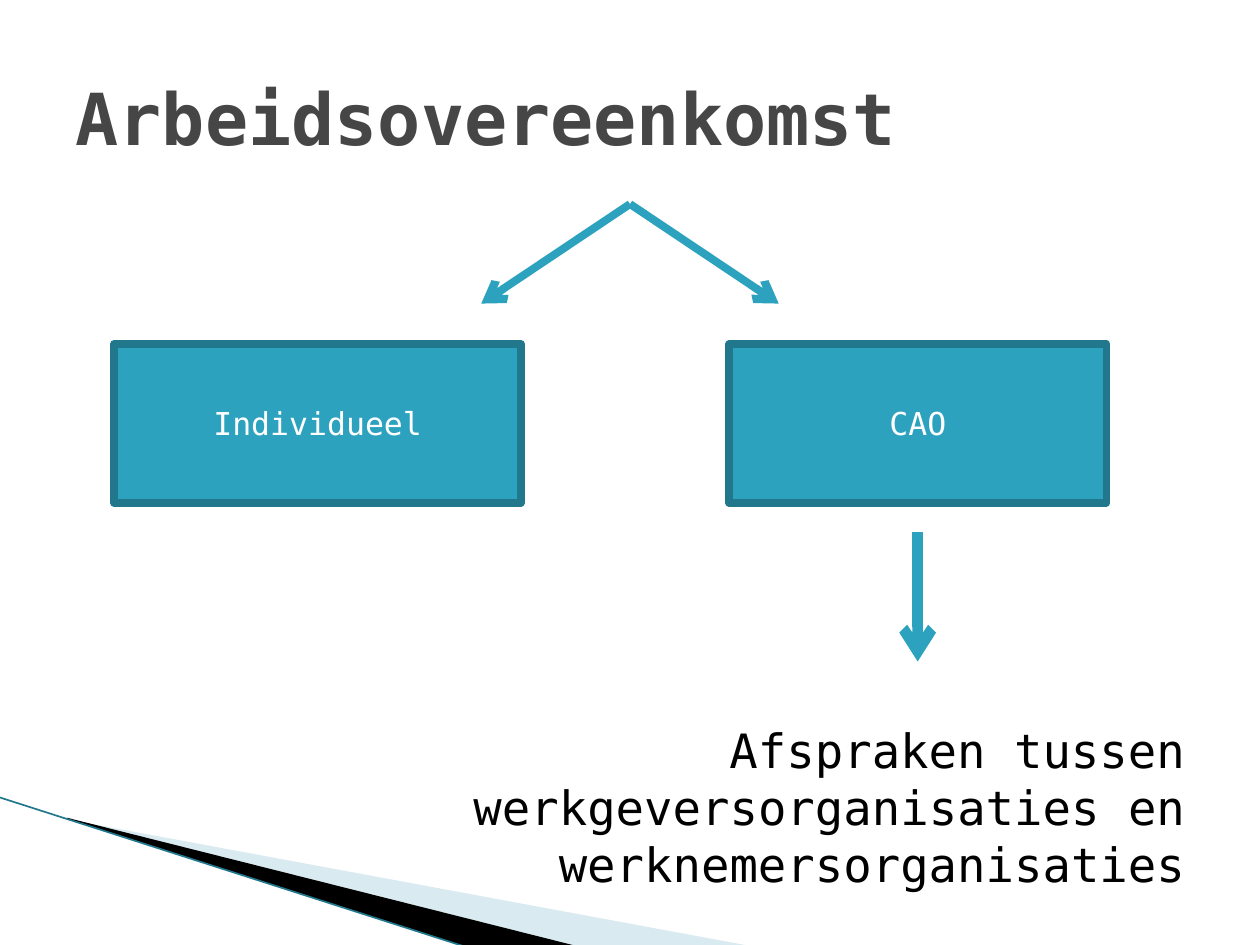
from dataclasses import dataclass

from lxml import etree
from pptx import Presentation
from pptx.dml.color import RGBColor
from pptx.enum.shapes import MSO_CONNECTOR, MSO_SHAPE
from pptx.enum.text import MSO_ANCHOR, PP_ALIGN
from pptx.oxml.ns import qn
from pptx.util import Pt

RECT = MSO_SHAPE.RECTANGLE
LINE = MSO_CONNECTOR.STRAIGHT
MIDDLE = MSO_ANCHOR.MIDDLE
TOP = MSO_ANCHOR.TOP
LEFT = PP_ALIGN.LEFT
CENTER = PP_ALIGN.CENTER
RIGHT = PP_ALIGN.RIGHT


@dataclass(frozen=True)
class Theme:
    font: str = "DejaVu Sans Mono"
    head: str = "464646"
    ink: str = "000000"
    light: str = "FFFFFF"
    fill: str = "2DA2BF"
    edge: str = "21788D"
    pale: str = "A0CBDC"
    head_size: float = 41
    body_size: float = 27
    box_size: float = 18


class Page:
    def __init__(self, slide, theme):
        self.slide = slide
        self.theme = theme

    def label(self, frame, text, size, color, align, anchor, bold=False):
        frame.word_wrap = True
        frame.vertical_anchor = anchor
        para = frame.paragraphs[0]
        para.text = text
        para.alignment = align
        font = para.font
        font.name = self.theme.font
        font.size = Pt(size)
        font.bold = bold
        font.color.rgb = RGBColor.from_string(color)
        return para

    def title(self, text, *area):
        shape = self.slide.shapes.title
        shape.left, shape.top, shape.width, shape.height = map(Pt, area)
        self.label(shape.text_frame, text, self.theme.head_size,
                   self.theme.head, LEFT, MIDDLE, True)

    def note(self, text, *area):
        shape = self.slide.shapes.add_textbox(*map(Pt, area))
        para = self.label(shape.text_frame, text, self.theme.body_size,
                          self.theme.ink, RIGHT, TOP)
        para.line_spacing = Pt(32.6)

    def box(self, text, *area):
        shape = self.slide.shapes.add_shape(RECT, *map(Pt, area))
        shape.shadow.inherit = False
        shape.fill.solid()
        shape.fill.fore_color.rgb = RGBColor.from_string(self.theme.fill)
        shape.line.color.rgb = RGBColor.from_string(self.theme.edge)
        shape.line.width = Pt(4.33)
        self.label(shape.text_frame, text, self.theme.box_size,
                   self.theme.light, CENTER, MIDDLE)

    def line(self, start, end, color, width):
        shape = self.slide.shapes.add_connector(LINE, *map(Pt, start + end))
        shape.line.color.rgb = RGBColor.from_string(color)
        shape.line.width = Pt(width)
        etree.SubElement(shape._element.spPr, qn("a:effectLst"))
        return shape

    def arrow(self, start, end, width):
        shape = self.line(start, end, self.theme.fill, width)
        stroke = shape._element.spPr.find(qn("a:ln"))
        etree.SubElement(stroke, qn("a:tailEnd"), type="arrow")

    def wedge(self, points, color, alpha=100):
        first, *rest = [(Pt(x), Pt(y)) for x, y in points]
        draft = self.slide.shapes.build_freeform(*first)
        draft.add_line_segments(rest)
        shape = draft.convert_to_shape()
        shape.shadow.inherit = False
        shape.fill.solid()
        shape.fill.fore_color.rgb = RGBColor.from_string(color)
        shape.line.fill.background()
        if alpha < 100:
            tone = shape._element.spPr.find(".//" + qn("a:srgbClr"))
            etree.SubElement(tone, qn("a:alpha"), val=str(alpha * 1000))


def main():
    deck = Presentation()
    deck.slide_width, deck.slide_height = Pt(720), Pt(540)
    theme = Theme()
    page = Page(deck.slides.add_slide(deck.slide_layouts[5]), theme)

    page.wedge([(39.6, 468.5), (428.4, 540.5), (328.3, 540.5), (39.6, 468)],
               theme.pale, 40)
    page.wedge([(38.2, 467.3), (329, 540.5), (267.8, 541.4), (38.9, 468)],
               theme.ink)
    page.line((-0.7, 455.5), (267.1, 541.4), theme.edge, 0.95)

    page.title("Arbeidsovereenkomst", 36, 21.6, 648, 90)
    for shift in (85, -85):
        page.arrow((360, 116.6), (360 + shift, 173.5), 4.5)
    for text, left, width in (("Individueel", 65.2, 232.6),
                              ("CAO", 416.7, 215.6)):
        page.box(text, left, 196.6, width, 90.7)
    page.arrow((524.4, 303.8), (524.4, 378), 6)
    page.note("Afspraken tussen werkgeversorganisaties en "
              "werknemersorganisaties", 252, 408.5, 432, 105)

    deck.save("out.pptx")


if __name__ == "__main__":
    main()
